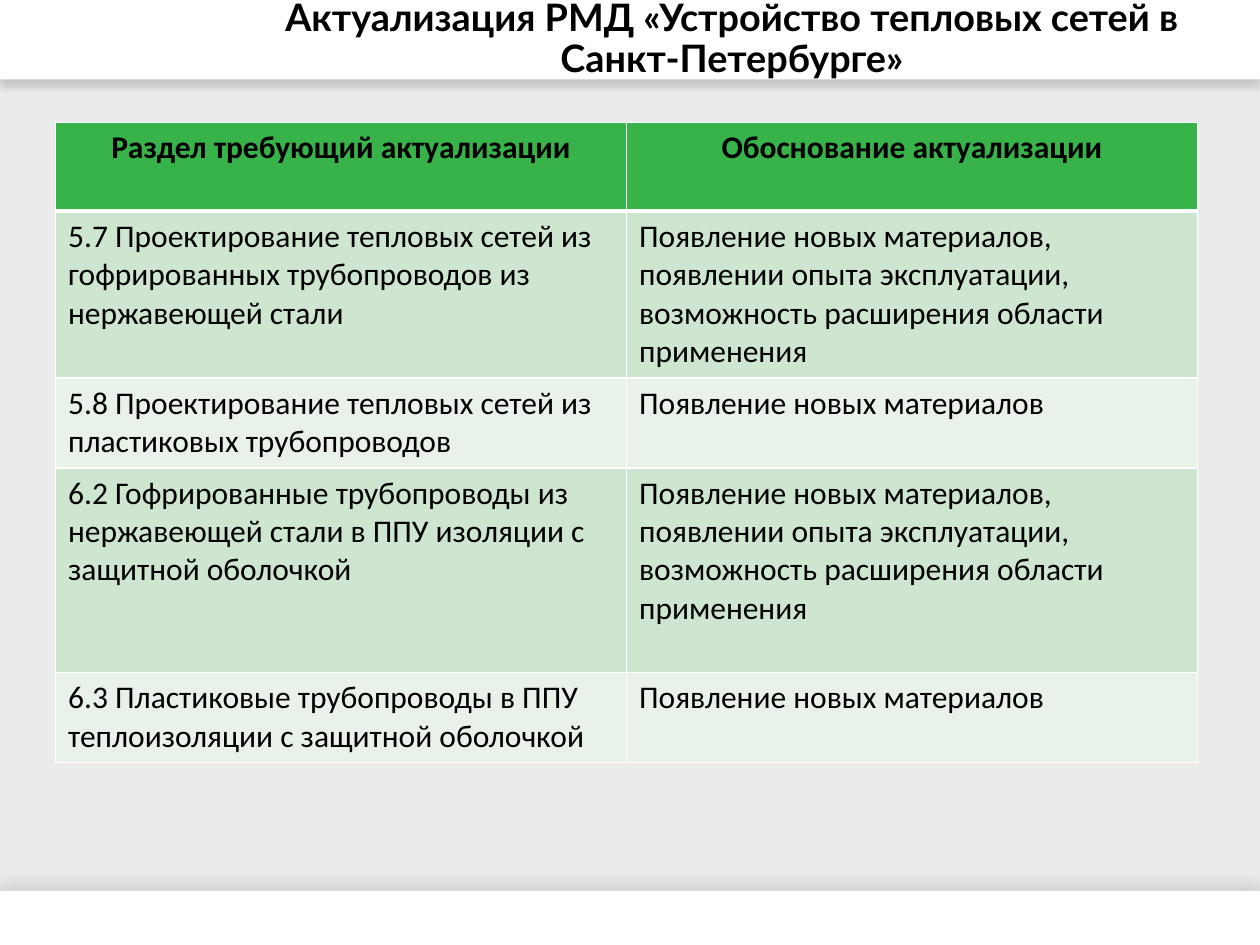
from lxml.etree import SubElement
from pptx import Presentation
from pptx.dml.color import RGBColor
from pptx.enum.shapes import MSO_SHAPE as Shape
from pptx.enum.text import MSO_ANCHOR as Anchor, MSO_AUTO_SIZE as AutoSize, PP_ALIGN as Align
from pptx.oxml.ns import qn
from pptx.util import Cm, Pt

COLORS = {
    "page": "EBEBEB", "white": "FFFFFF", "ink": "000000",
    "header": "37B34A", "band_dark": "CEE5D0", "band_light": "E8F2E9",
}
TITLE = "Актуализация РМД «Устройство тепловых сетей в Санкт-Петербурге»"
NEW_MATERIALS = "Появление новых материалов"
WIDER_USE = (NEW_MATERIALS + ", появлении опыта эксплуатации, "
             "возможность расширения области применения")
SECTIONS = [
    ("Раздел требующий актуализации", "Обоснование актуализации", 1.78),
    ("5.7 Проектирование тепловых сетей из гофрированных трубопроводов "
     "из нержавеющей стали", WIDER_USE, 3.37),
    ("5.8 Проектирование тепловых сетей из пластиковых трубопроводов", NEW_MATERIALS, 1.81),
    ("6.2 Гофрированные трубопроводы из нержавеющей стали в ППУ изоляции "
     "с защитной оболочкой", WIDER_USE, 4.13),
    ("6.3 Пластиковые трубопроводы в ППУ теплоизоляции с защитной оболочкой",
     NEW_MATERIALS, 1.81),
]


def rgb(name):
    """Return the palette colour of that name."""
    return RGBColor.from_string(COLORS[name])


def paint(fill, name):
    """Make a fill solid in a palette colour."""
    fill.solid()
    fill.fore_color.rgb = rgb(name)


def format_font(font, **values):
    """Set font attributes and the ink colour."""
    for attribute, value in values.items():
        setattr(font, attribute, value)
    font.color.rgb = rgb("ink")


def add_strip(slide, top, height, alpha, blur, direction):
    """Add a full-width white strip that casts a soft shadow."""
    strip = slide.shapes.add_shape(Shape.RECTANGLE, 0, Cm(top), Cm(25.4), Cm(height))
    paint(strip.fill, "white")
    strip.line.fill.background()
    strip.shadow.inherit = False
    effects = strip.element.spPr.find(qn("a:effectLst"))
    shadow = SubElement(effects, qn("a:outerShdw"), blurRad=str(Pt(blur)), dist=str(Pt(4)),
                        dir=str(direction * 60000), algn="ctr", rotWithShape="0")
    tint = SubElement(shadow, qn("a:srgbClr"), val=COLORS["ink"])
    SubElement(tint, qn("a:alpha"), val=str(alpha * 1000))


def set_title(slide):
    """Place and format the title in front of the top strip."""
    title = slide.shapes.title
    box = {"left": Cm(5.38), "top": Cm(0), "width": Cm(18.75), "height": Cm(1.6)}
    for attribute, value in box.items():
        setattr(title, attribute, value)
    slide.shapes.element.append(title.element)
    frame = title.text_frame
    frame.text = TITLE
    layout = {"word_wrap": True, "auto_size": AutoSize.NONE, "vertical_anchor": Anchor.MIDDLE}
    for attribute, value in layout.items():
        setattr(frame, attribute, value)
    heading = frame.paragraphs[0]
    heading.alignment = Align.CENTER
    heading.line_spacing = 0.9
    format_font(heading.runs[0].font, name="Lato", size=Pt(21.6), bold=True)


def add_borders(cell, bottom):
    """Draw white borders around a cell, with its own bottom width."""
    properties = cell._tc.get_or_add_tcPr()
    widths = {"a:lnL": 1, "a:lnR": 1, "a:lnT": 1, "a:lnB": bottom}
    for position, (side, width) in enumerate(widths.items()):
        border = properties.makeelement(qn(side), {"w": str(Pt(width))})
        properties.insert(position, border)
        SubElement(SubElement(border, qn("a:solidFill")), qn("a:srgbClr"), val=COLORS["white"])


def fill_cell(cell, wording, color, is_header):
    """Write and format one table cell."""
    cell.text = wording
    paint(cell.fill, color)
    add_borders(cell, 3 if is_header else 1)
    paragraph = cell.text_frame.paragraphs[0]
    paragraph.alignment = Align.CENTER if is_header else Align.LEFT
    format_font(paragraph.runs[0].font, name="Calibri", size=Pt(18), bold=is_header)


def add_sections_table(slide):
    """Add the table of sections and reasons for updating them."""
    total = sum(height for _, _, height in SECTIONS)
    table = slide.shapes.add_table(len(SECTIONS), 2, Cm(1.12), Cm(2.47),
                                   Cm(23.02), Cm(total)).table
    for index, (section, reason, height) in enumerate(SECTIONS):
        table.rows[index].height = Cm(height)
        band = "band_dark" if index % 2 else "band_light"
        color = "header" if index == 0 else band
        for column, wording in enumerate((section, reason)):
            fill_cell(table.cell(index, column), wording, color, index == 0)


def main():
    """Build the slide and save it."""
    deck = Presentation()
    deck.slide_width, deck.slide_height = Cm(25.4), Cm(19.05)
    slide = deck.slides.add_slide(deck.slide_layouts[5])
    paint(slide.background.fill, "page")
    add_strip(slide, top=0, height=1.6, alpha=14, blur=4, direction=90)
    add_strip(slide, top=17.96, height=1.09, alpha=13, blur=9, direction=270)
    set_title(slide)
    add_sections_table(slide)
    deck.save("out.pptx")


if __name__ == "__main__":
    main()
